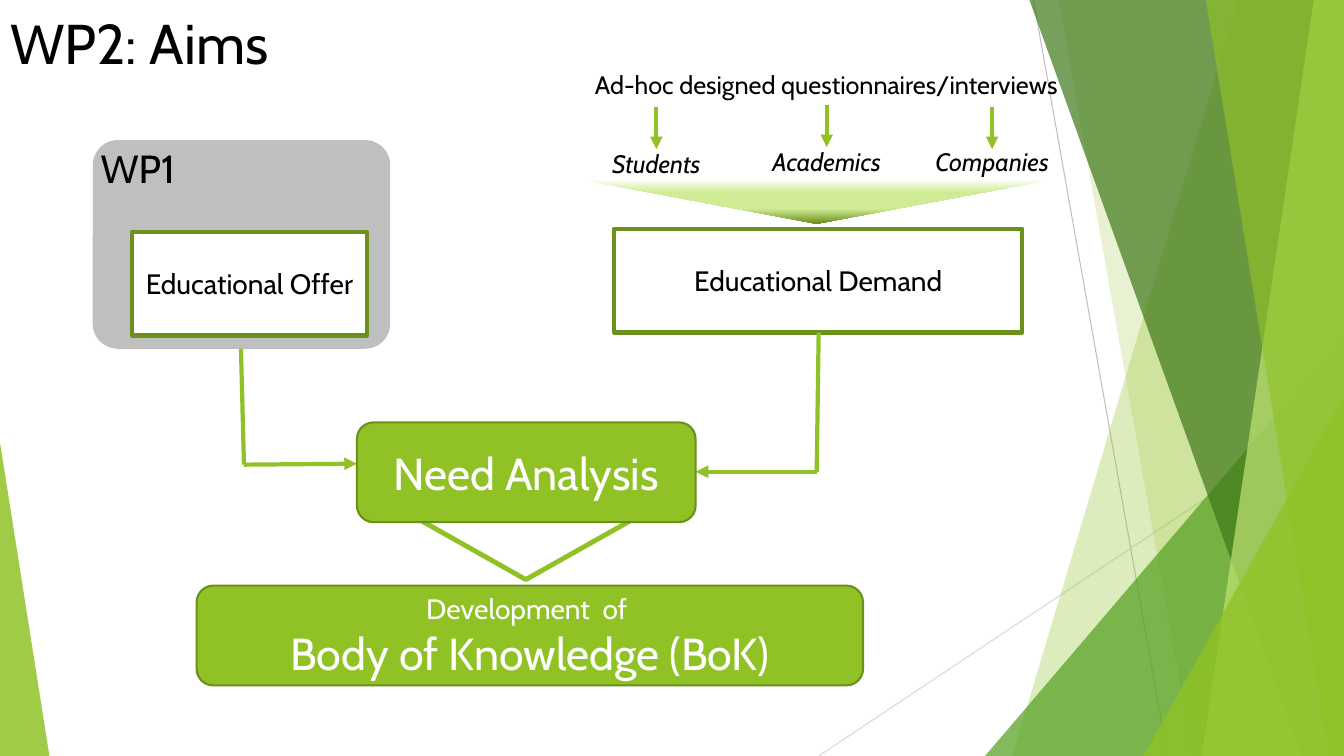
import dataclasses

import pptx
import pptx.dml.color
import pptx.enum.shapes
import pptx.enum.text
import pptx.oxml
import pptx.oxml.ns
import pptx.util

PX = 9144
SHAPE = pptx.enum.shapes.MSO_SHAPE
ALIGN = pptx.enum.text.PP_ALIGN
ANCHOR = pptx.enum.text.MSO_ANCHOR
AUTO_SIZE = pptx.enum.text.MSO_AUTO_SIZE


@dataclasses.dataclass(frozen=True)
class Theme:
    """Colours, font and type sizes of the slide."""
    font: str = "Cabin"
    ink: str = "000000"
    paper: str = "FFFFFF"
    green: str = "90C226"
    outline: str = "6B901C"
    leaf: str = "54A021"
    forest: str = "3F7819"
    lime: str = "C0E474"
    panel: str = "BFBFBF"
    hairline: str = "D9D9D9"
    funnel: tuple = ((0, "FAFDF3"), (27, "D0EB96"), (65, "D0EB96"), (100, "688E18"))
    title: int = 40
    major: int = 32
    heading: int = 28
    body: int = 20
    label: int = 18


THEME = Theme()


@dataclasses.dataclass(frozen=True)
class Box:
    """A rectangle in px."""
    left: int
    top: int
    width: int
    height: int

    def inner(self, left, top, width, height):
        """Return a box placed relative to this one."""
        return Box(self.left + left, self.top + top, width, height)

    def point(self, x, y):
        """Return a point placed relative to this box."""
        return self.left + x, self.top + y

    def emu(self):
        """Return left, top, width and height in EMU."""
        return [side * PX for side in dataclasses.astuple(self)]


def rgb(colour):
    """Turn a hex string into a colour."""
    return pptx.dml.color.RGBColor.from_string(colour)


def paint(shape, fill=None, outline=None, weight=1, alpha=100):
    """Set fill, opacity and outline of a shape."""
    shape.shadow.inherit = False
    if fill:
        shape.fill.solid()
        shape.fill.fore_color.rgb = rgb(fill)
        if alpha < 100:
            tint = shape.fill._xPr.find(".//" + pptx.oxml.ns.qn("a:srgbClr"))
            tint.append(pptx.oxml.parse_xml(
                f'<a:alpha {pptx.oxml.ns.nsdecls("a")} val="{alpha * 1000}"/>'))
    else:
        shape.fill.background()
    if outline:
        shape.line.color.rgb = rgb(outline)
        shape.line.width = pptx.util.Pt(weight)
    else:
        shape.line.fill.background()


def add_preset(slide, kind, box, adjust=None, **look):
    """Add a painted preset shape."""
    shape = slide.shapes.add_shape(kind, *box.emu())
    if adjust is not None:
        shape.adjustments[0] = adjust
    paint(shape, **look)
    return shape


def style(paragraph, size, colour=THEME.ink, align=ALIGN.CENTER, italic=None):
    """Format a whole paragraph."""
    paragraph.alignment = align
    paragraph.font.name = THEME.font
    paragraph.font.size = pptx.util.Pt(size)
    paragraph.font.color.rgb = rgb(colour)
    paragraph.font.italic = italic


def write(shape, text, size, colour=THEME.ink):
    """Write one centred line inside a shape."""
    shape.text_frame.vertical_anchor = ANCHOR.MIDDLE
    shape.text_frame.text = text
    style(shape.text_frame.paragraphs[0], size, colour)


def add_label(slide, box, text, size, **look):
    """Add a text box that grows with its text."""
    frame = slide.shapes.add_textbox(*box.emu()).text_frame
    frame.word_wrap = True
    frame.auto_size = AUTO_SIZE.SHAPE_TO_FIT_TEXT
    frame.text = text
    style(frame.paragraphs[0], size, **look)


def add_line(slide, start, end, colour=THEME.green, weight=3, arrow=False):
    """Add a straight line, with an arrowhead at its end if asked."""
    line = slide.shapes.add_connector(
        pptx.enum.shapes.MSO_CONNECTOR.STRAIGHT, *(v * PX for v in (*start, *end)))
    line.line.color.rgb = rgb(colour)
    line.line.width = pptx.util.Pt(weight)
    declared = pptx.oxml.ns.nsdecls("a")
    if arrow:
        line.line._get_or_add_ln().append(
            pptx.oxml.parse_xml(f'<a:tailEnd {declared} type="triangle"/>'))
    line._element.spPr.append(pptx.oxml.parse_xml(f"<a:effectLst {declared}/>"))


def add_band(slide, box, top_x, bottom_x, colour, alpha):
    """Add a slanted band that reaches the right edge of the box."""
    right = box.width
    outline = slide.shapes.build_freeform(*box.point(top_x, 0), scale=PX)
    outline.add_line_segments(
        [box.point(right, 0), box.point(right, box.height), box.point(bottom_x, box.height)])
    paint(outline.convert_to_shape(), fill=colour, alpha=alpha)


def add_backdrop(slide, box):
    """Draw the translucent facets at both edges of the slide."""
    add_line(slide, box.point(1025, 0), box.point(1158, 750), THEME.panel, 0.75)
    add_line(slide, box.point(1333, 403), box.point(812, 750), THEME.hairline, 0.75)
    for band in ((1228, 1004, THEME.green, 30), (1050, 1183, THEME.green, 20)):
        add_band(slide, box, *band)
    add_preset(slide, SHAPE.ISOSCELES_TRIANGLE, box.inner(977, 333, 356, 417), 1,
               fill=THEME.leaf, alpha=72)
    for band in ((1021, 1291, THEME.forest, 70), (1303, 1192, THEME.lime, 70),
                 (1196, 1318, THEME.green, 65)):
        add_band(slide, box, *band)
    add_preset(slide, SHAPE.ISOSCELES_TRIANGLE, box.inner(1134, 393, 199, 357), 1,
               fill=THEME.green, alpha=80)
    add_preset(slide, SHAPE.ISOSCELES_TRIANGLE, box.inner(0, 439, 49, 311), 0,
               fill=THEME.green, alpha=85)


def add_title(slide, box):
    """Place and fill the title placeholder."""
    title = slide.shapes.title
    title.left, title.top, title.width, title.height = box.emu()
    frame = title.text_frame
    frame.auto_size = AUTO_SIZE.NONE
    frame.vertical_anchor = ANCHOR.TOP
    frame.text = "WP2: Aims"
    style(frame.paragraphs[0], THEME.title, align=ALIGN.LEFT)


def add_offer(slide, box):
    """Draw the WP1 panel with the educational offer."""
    add_preset(slide, SHAPE.ROUNDED_RECTANGLE, box, 0.12, fill=THEME.panel)
    add_label(slide, box.inner(-2, -1, 143, 57), "WP1", THEME.heading, align=ALIGN.LEFT)
    offer = add_preset(slide, SHAPE.RECTANGLE, box.inner(39, 91, 233, 103),
                       fill=THEME.paper, outline=THEME.outline, weight=3)
    write(offer, "Educational Offer", THEME.body)


def add_demand(slide, box):
    """Draw the surveyed groups funnelled into the educational demand."""
    add_label(slide, box.inner(0, 0, 587, 40),
              "Ad-hoc designed questionnaires/interviews", THEME.label)
    for group, centre, arrow_top, label_top in (
            ("Students", 125, 42, 78), ("Academics", 294, 40, 76), ("Companies", 458, 42, 76)):
        add_line(slide, box.point(centre, arrow_top), box.point(centre, arrow_top + 42), arrow=True)
        add_label(slide, box.inner(centre - 80, label_top, 160, 40), group,
                  THEME.label, italic=True)
    funnel = add_preset(slide, SHAPE.ISOSCELES_TRIANGLE, box.inner(55, 115, 458, 43), 0.5,
                        fill=THEME.green)
    funnel.rotation = 180
    stops = "".join(f'<a:gs pos="{place * 1000}"><a:srgbClr val="{colour}"/></a:gs>'
                    for place, colour in THEME.funnel)
    properties = funnel._element.spPr
    properties.replace(properties.find(pptx.oxml.ns.qn("a:solidFill")), pptx.oxml.parse_xml(
        f'<a:gradFill {pptx.oxml.ns.nsdecls("a")} rotWithShape="0"><a:gsLst>{stops}</a:gsLst>'
        '<a:lin ang="5400000" scaled="0"/></a:gradFill>'))
    demand = add_preset(slide, SHAPE.RECTANGLE, box.inner(83, 163, 405, 103),
                        outline=THEME.outline, weight=3)
    write(demand, "Educational Demand", THEME.body)


def add_analysis(slide, box):
    """Draw the need analysis, its two inputs and the resulting body of knowledge."""
    pointer = add_preset(slide, SHAPE.PENTAGON, box.inner(270, 56, 113, 265), 0.66,
                         fill=THEME.paper, outline=THEME.green, weight=3.5)
    pointer.rotation = 90
    for start, corner, end in (((44, 16), (47, 131), (159, 130)),
                               ((617, 0), (615, 138), (495, 138))):
        add_line(slide, box.point(*start), box.point(*corner))
        add_line(slide, box.point(*corner), box.point(*end), arrow=True)
    card = dict(fill=THEME.green, outline=THEME.outline, weight=1.5)
    analysis = add_preset(slide, SHAPE.ROUNDED_RECTANGLE, box.inner(159, 89, 336, 99), **card)
    write(analysis, "Need Analysis", THEME.major, THEME.paper)
    knowledge = add_preset(slide, SHAPE.ROUNDED_RECTANGLE, box.inner(0, 251, 661, 99), **card)
    write(knowledge, "Development  of ", THEME.major, THEME.paper)
    result = knowledge.text_frame.paragraphs[0]
    result.runs[0].font.size = pptx.util.Pt(THEME.body)
    result.add_line_break()
    result.add_run().text = "Body of Knowledge (BoK)"


def main():
    """Build and save the slide."""
    deck = pptx.Presentation()
    deck.slide_width, deck.slide_height = 1333 * PX, 750 * PX
    slide = deck.slides.add_slide(deck.slide_layouts.get_by_name("Title Only"))
    add_backdrop(slide, Box(0, 0, 1333, 750))
    add_title(slide, Box(0, 3, 940, 144))
    add_offer(slide, Box(92, 139, 295, 207))
    add_demand(slide, Box(526, 64, 587, 266))
    add_analysis(slide, Box(195, 330, 661, 350))
    deck.save("out.pptx")


if __name__ == "__main__":
    main()
